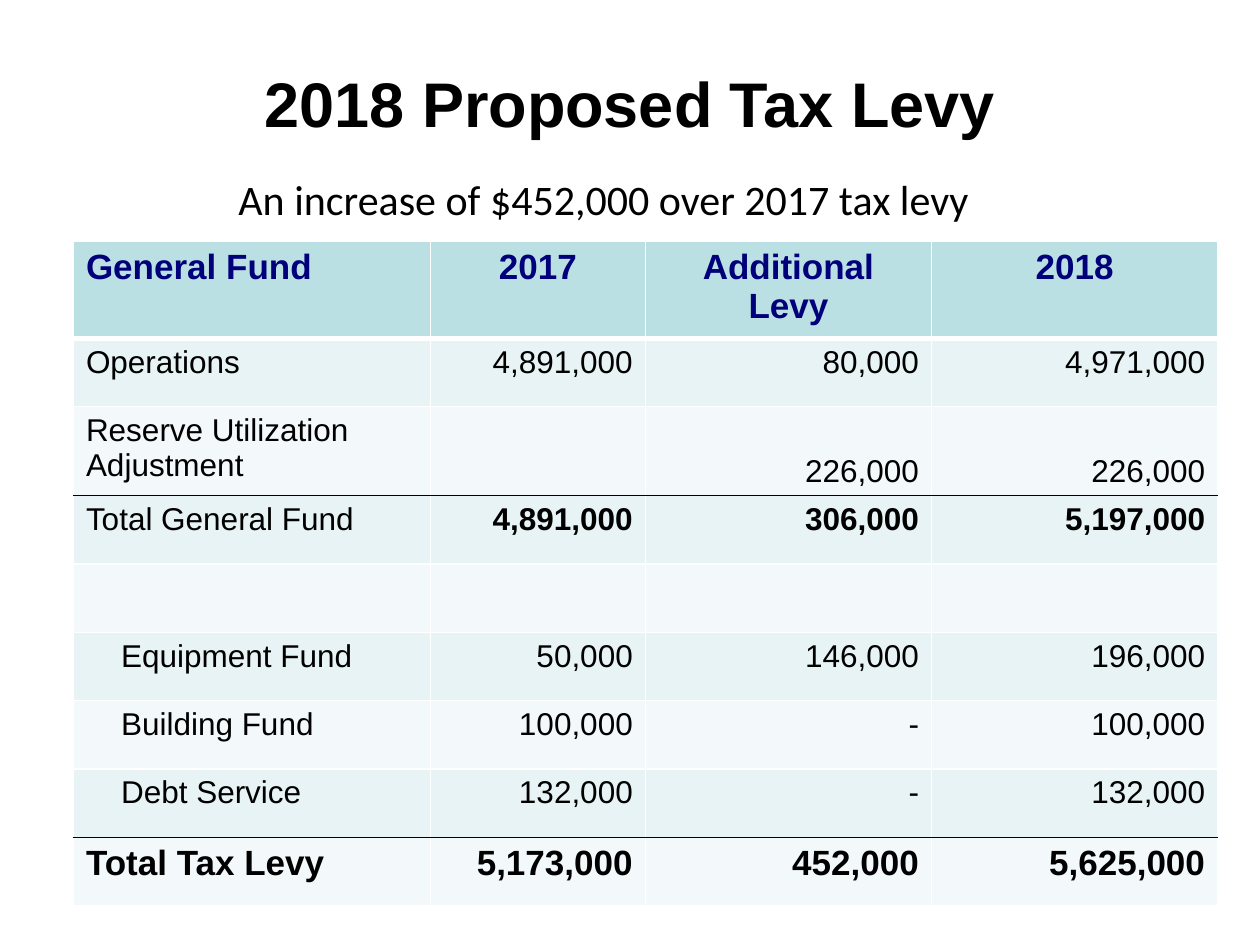
from lxml import etree
from pptx import Presentation
from pptx.dml.color import RGBColor
from pptx.enum import text
from pptx.oxml.ns import qn
from pptx.util import Cm, Pt

TITLE = "2018 Proposed Tax Levy"
SUBTITLE = "An increase of $452,000 over 2017 tax levy"
ROWS = [
    ("General Fund", "2017", "Additional Levy", "2018"),
    ("Operations", "4,891,000", "80,000", "4,971,000"),
    ("Reserve Utilization\nAdjustment", "", "226,000", "226,000"),
    ("Total General Fund", "4,891,000", "306,000", "5,197,000"),
    ("", "", "", ""),
    ("Equipment Fund", "50,000", "146,000", "196,000"),
    ("Building Fund", "100,000", "-", "100,000"),
    ("Debt Service", "132,000", "-", "132,000"),
    ("Total Tax Levy", "5,173,000", "452,000", "5,625,000"),
]
HEADER, RESERVE, SUBTOTAL, TOTAL = 0, 2, 3, 8
INDENTED = (5, 6, 7)
COL_WIDTHS = (7.2, 4.33, 5.77, 5.77)
ROW_HEIGHT = 1.38
TALL_ROWS = {HEADER: 1.93, RESERVE: 1.79}
COLORS = {"text": "000000", "heading": "00007B", "header": "BBE0E3",
          "odd": "E7F3F4", "even": "F3F9FA", "grid": "FFFFFF", "rule": "000000"}
ALIGN = text.PP_ALIGN


def rgb(name):
    return RGBColor.from_string(COLORS[name])


def set_font(p, size, name="Arial", color="text", bold=False):
    p.font.size, p.font.name, p.font.bold = Pt(size), name, bold
    p.font.color.rgb = rgb(color)


def add_border(cell, side, color, width):
    ln = etree.SubElement(cell._tc.get_or_add_tcPr(), qn("a:ln" + side), w=str(Pt(width)))
    fill = etree.SubElement(ln, qn("a:solidFill"))
    etree.SubElement(fill, qn("a:srgbClr"), val=COLORS[color])


def row_line(i):
    if i in (SUBTOTAL, TOTAL):
        return "rule", 1
    return "grid", 3 if i == HEADER + 1 else 1


def format_cell(cell, r, c, value):
    for side, line in (("L", ("grid", 1)), ("R", ("grid", 1)),
                       ("T", row_line(r)), ("B", row_line(r + 1))):
        add_border(cell, side, *line)
    cell.fill.solid()
    cell.fill.fore_color.rgb = rgb("header" if r == HEADER else "odd" if r % 2 else "even")
    if c == 0 and r in INDENTED:
        cell.margin_left = Cm(0.96)
    if c and r == RESERVE:
        cell.vertical_anchor = text.MSO_ANCHOR.BOTTOM
    cell.text = value
    for p in cell.text_frame.paragraphs:
        p.alignment = ALIGN.LEFT if c == 0 else ALIGN.CENTER if r == HEADER else ALIGN.RIGHT
        set_font(p, 20 if r in (HEADER, TOTAL) else 18,
                 color="heading" if r == HEADER else "text",
                 bold=r in (HEADER, TOTAL) or (r == SUBTOTAL and c > 0))


def main():
    prs = Presentation()
    prs.slide_width, prs.slide_height = Cm(25.4), Cm(19.05)
    s = prs.slides.add_slide(prs.slide_layouts[5])

    title = s.shapes.title
    title.left, title.top, title.width, title.height = Cm(1.27), Cm(0.76), Cm(22.86), Cm(2.62)
    tf = title.text_frame
    tf.text = TITLE
    tf.vertical_anchor = text.MSO_ANCHOR.MIDDLE
    tf.paragraphs[0].alignment = ALIGN.CENTER
    set_font(tf.paragraphs[0], 36, bold=True)

    tf = s.shapes.add_textbox(Cm(2.11), Cm(3.38), Cm(20.12), Cm(1.27)).text_frame
    tf.word_wrap = True
    tf.text = SUBTITLE
    tf.paragraphs[0].alignment = ALIGN.CENTER
    set_font(tf.paragraphs[0], 24, "Calibri")

    heights = [TALL_ROWS.get(r, ROW_HEIGHT) for r in range(len(ROWS))]
    table = s.shapes.add_table(len(ROWS), len(COL_WIDTHS), Cm(1.48), Cm(4.87),
                               Cm(sum(COL_WIDTHS)), Cm(sum(heights))).table
    for col, width in zip(table.columns, COL_WIDTHS):
        col.width = Cm(width)
    for r, (row, height) in enumerate(zip(table.rows, heights)):
        row.height = Cm(height)
        for c, value in enumerate(ROWS[r]):
            format_cell(table.cell(r, c), r, c, value)

    prs.save("out.pptx")


if __name__ == "__main__":
    main()
